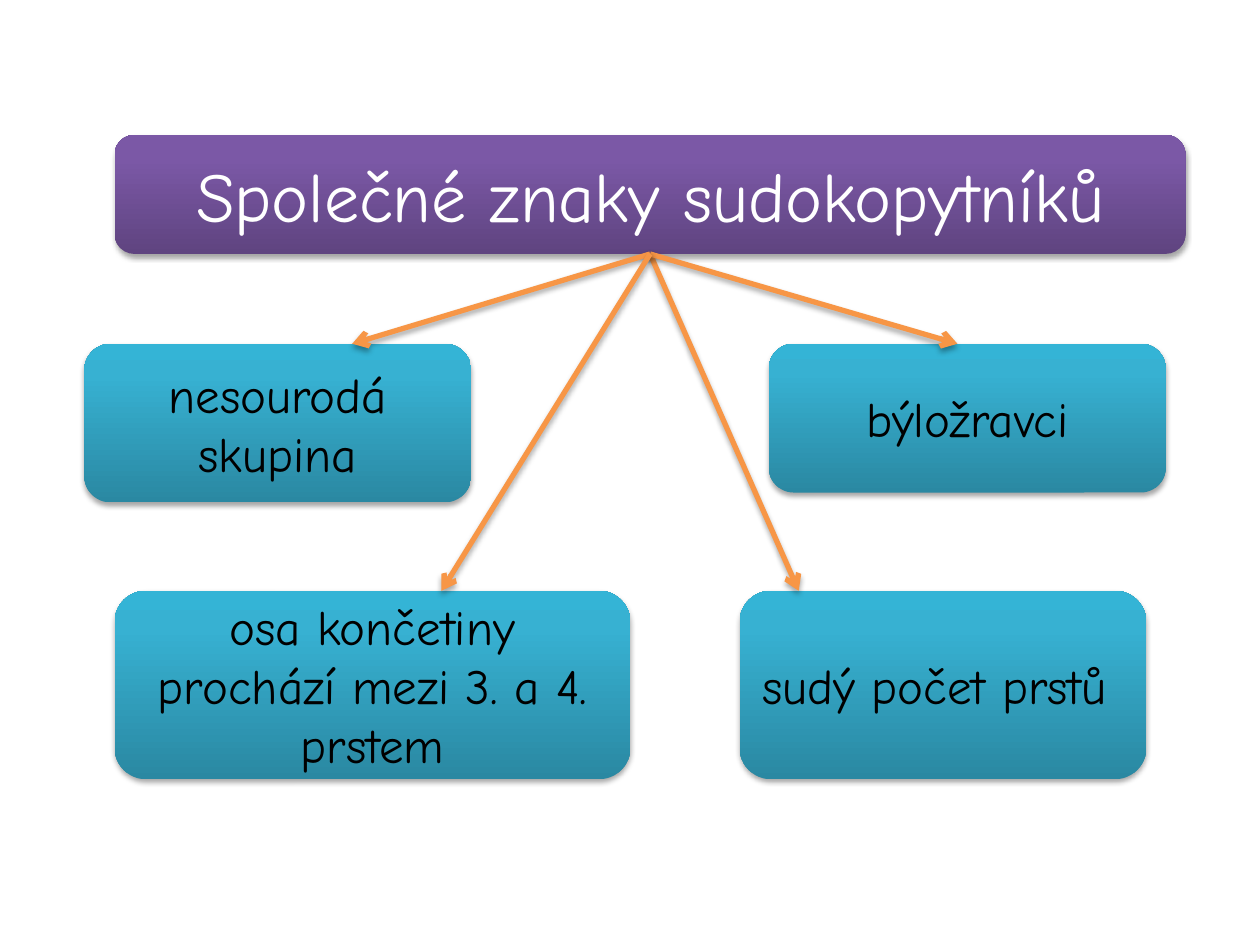
from copy import deepcopy

from lxml import etree
from pptx import Presentation
from pptx.dml.color import RGBColor
from pptx.enum.shapes import MSO_CONNECTOR, MSO_SHAPE
from pptx.enum.text import MSO_ANCHOR, PP_ALIGN
from pptx.oxml import parse_xml
from pptx.oxml.ns import nsdecls, qn
from pptx.util import Cm, Pt

ROUNDED = MSO_SHAPE.ROUNDED_RECTANGLE
STRAIGHT = MSO_CONNECTOR.STRAIGHT
MIDDLE = MSO_ANCHOR.MIDDLE
CENTER = PP_ALIGN.CENTER

WHITE = RGBColor(0xFF, 0xFF, 0xFF)
BLACK = RGBColor(0x00, 0x00, 0x00)
ORANGE = RGBColor(0xF7, 0x96, 0x46)
PURPLES = [RGBColor(0x5F, 0x44, 0x80), RGBColor(0x7B, 0x58, 0xA6), RGBColor(0x7C, 0x57, 0xA8)]
TEALS = [RGBColor(0x2A, 0x88, 0xA2), RGBColor(0x37, 0xB1, 0xD2), RGBColor(0x34, 0xB4, 0xD6)]
GRADIENT_POSITIONS = [0, 0.8, 1]
BOTTOM_SITE = 2

SHADOW_XML = (
    f'<a:effectLst {nsdecls("a")}>'
    '<a:outerShdw blurRad="40000" dist="23000" dir="5400000" rotWithShape="0">'
    '<a:srgbClr val="000000"><a:alpha val="35000"/></a:srgbClr>'
    '</a:outerShdw></a:effectLst>'
)


def add_box(slide, text, bounds, colors, font_format):
    """Add a rounded box with a bottom-to-top gradient, a soft shadow and centred text."""
    box = slide.shapes.add_shape(ROUNDED, *(Cm(length) for length in bounds))
    box.line.fill.background()
    box.fill.gradient()
    box.fill.gradient_angle = 90
    stop_list = box._element.spPr.find(qn("a:gradFill")).find(qn("a:gsLst"))
    stop_list.append(deepcopy(stop_list[0]))
    for stop, position, color in zip(box.fill.gradient_stops, GRADIENT_POSITIONS, colors):
        stop.position = position
        stop.color.rgb = color
    box._element.spPr.append(parse_xml(SHADOW_XML))

    frame = box.text_frame
    frame.word_wrap = True
    frame.vertical_anchor = MIDDLE
    paragraph = frame.paragraphs[0]
    paragraph.alignment = CENTER
    run = paragraph.add_run()
    run.text = text
    for name, value in font_format.items():
        if name == "color":
            run.font.color.rgb = value
        else:
            setattr(run.font, name, value)
    return box


prs = Presentation()
prs.slide_width = Cm(25.4)
prs.slide_height = Cm(19.05)
slide = prs.slides.add_slide(prs.slide_layouts[6])

heading_format = {"name": "Comic Neue", "size": Pt(40), "color": WHITE}
trait_format = {"name": "Comic Neue", "size": Pt(28), "color": BLACK}

heading = add_box(slide, "Společné znaky sudokopytníků",
                  (2.31, 2.72, 21.59, 2.4), PURPLES, heading_format)

UPPER_ROW, LOWER_ROW = 6.93, 11.91

# Text, left, top, width, height, x of the arrow tip on the top edge
traits = [
    ("sudý počet prstů ", 14.91, LOWER_ROW, 8.2, 3.8, 16.1),
    ("býložravci", 15.5, UPPER_ROW, 8, 3, 19.3),
    ("nesourodá skupina", 1.7, UPPER_ROW, 7.8, 3.2, 7.1),
    ("osa končetiny prochází mezi 3. a 4. prstem", 2.31, LOWER_ROW, 10.4, 3.8, 8.9),
]

for text, left, top, width, height, tip in traits:
    add_box(slide, text, (left, top, width, height), TEALS, trait_format)

    arrow = slide.shapes.add_connector(STRAIGHT, 0, 0, Cm(tip), Cm(top))
    arrow.begin_connect(heading, BOTTOM_SITE)
    arrow.line.color.rgb = ORANGE
    arrow.line.width = Pt(3)
    etree.SubElement(arrow.line._get_or_add_ln(), qn("a:tailEnd"), type="arrow")
    arrow._element.spPr.append(parse_xml(SHADOW_XML))

prs.save("out.pptx")
